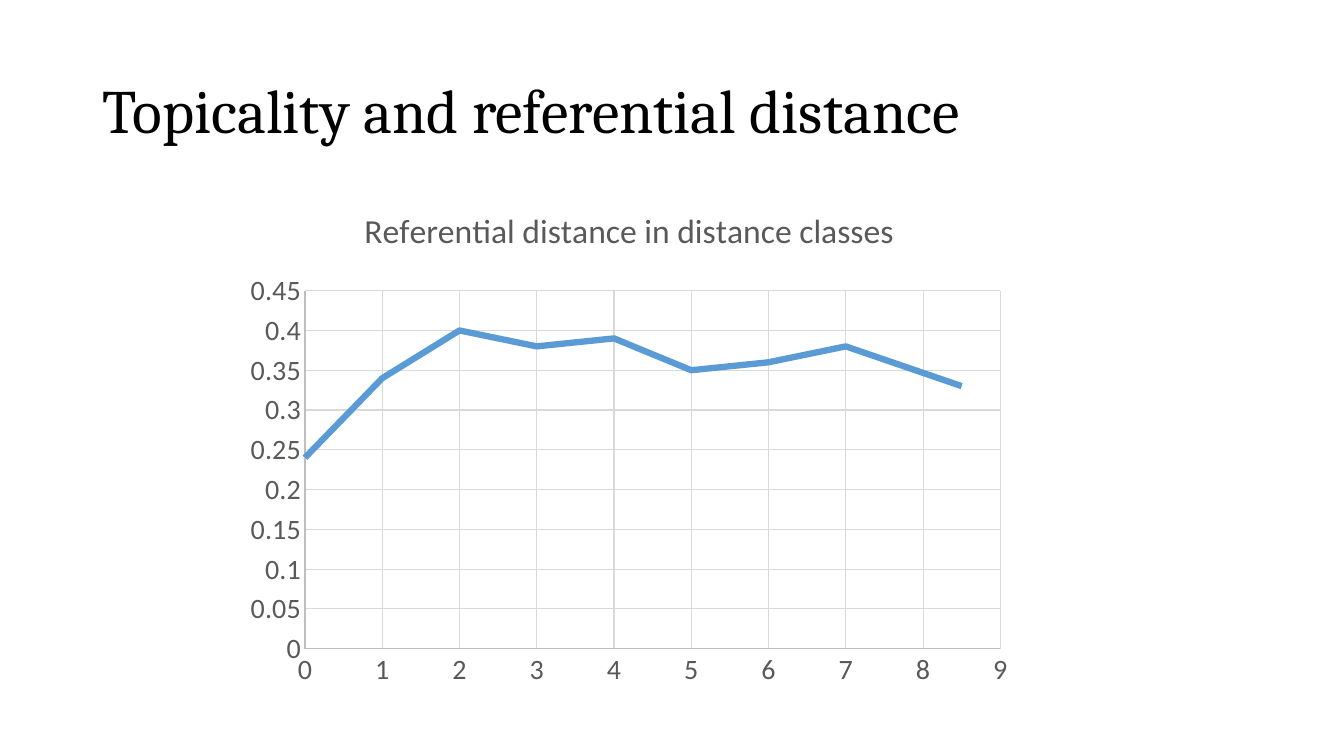
import pptx
import pptx.chart.data
import pptx.dml.color
import pptx.enum.chart
import pptx.enum.text
import pptx.util

# Content
TITLE = "Topicality and referential distance"
CHART_TITLE = "Referential distance in distance classes"
POINTS = [
    (0, 0.24), (1, 0.34), (2, 0.4), (3, 0.38), (4, 0.39),
    (5, 0.35), (6, 0.36), (7, 0.38), (8.5, 0.33),
]
COLOURS = {"title": "000000", "label": "595959", "axis": "BFBFBF",
           "grid": "D9D9D9", "series": "5B9BD5"}
TITLE_AREA = (0.92, 0.4, 11.5, 1.45)
CHART_AREA = (2.33, 1.85, 7.82, 5.07)


def inches(area):
    return [pptx.util.Inches(length) for length in area]


def style_font(font, name, size, colour):
    font.name = name
    font.size = pptx.util.Pt(size)
    font.bold = False
    font.color.rgb = pptx.dml.color.RGBColor.from_string(COLOURS[colour])


def style_line(line, colour, width):
    line.color.rgb = pptx.dml.color.RGBColor.from_string(COLOURS[colour])
    line.width = pptx.util.Pt(width)


def style_axis(axis, maximum, step, number_format, line_width):
    axis.minimum_scale = 0
    axis.maximum_scale = maximum
    axis.major_unit = step
    axis.major_tick_mark = pptx.enum.chart.XL_TICK_MARK.NONE
    axis.minor_tick_mark = pptx.enum.chart.XL_TICK_MARK.NONE
    axis.tick_labels.number_format = number_format
    axis.tick_labels.number_format_is_linked = False
    style_font(axis.tick_labels.font, "Calibri", 20, "label")
    style_line(axis.format.line, "axis", line_width)
    axis.has_major_gridlines = True
    style_line(axis.major_gridlines.format.line, "grid", 0.75)


deck = pptx.Presentation()
deck.slide_width = pptx.util.Inches(13.33)
deck.slide_height = pptx.util.Inches(7.5)
page = deck.slides.add_slide(deck.slide_layouts[6])

# Slide title
frame = page.shapes.add_textbox(*inches(TITLE_AREA)).text_frame
frame.word_wrap = True
frame.vertical_anchor = pptx.enum.text.MSO_ANCHOR.MIDDLE
para = frame.paragraphs[0]
para.text = TITLE
para.line_spacing = 0.9
style_font(para.font, "Cambria", 44, "title")

# Line chart over distance classes
data = pptx.chart.data.XyChartData()
distances = data.add_series("Series 1")
for x, y in POINTS:
    distances.add_data_point(x, y)
chart = page.shapes.add_chart(
    pptx.enum.chart.XL_CHART_TYPE.XY_SCATTER_LINES_NO_MARKERS,
    *inches(CHART_AREA), data).chart
chart.has_legend = False
chart.font.name = "Calibri"
chart.font.size = pptx.util.Pt(10)
chart.has_title = True
heading = chart.chart_title.text_frame.paragraphs[0]
heading.text = CHART_TITLE
style_font(heading.font, "Calibri", 24, "label")
chart.chart_title.include_in_layout = False

style_axis(chart.category_axis, 9, 1, "General", 0.75)
style_axis(chart.value_axis, 0.45, 0.05, "General", 2)

plot = chart.plots[0]
plot.vary_by_categories = False
curve = plot.series[0]
curve.smooth = False
curve.marker.style = pptx.enum.chart.XL_MARKER_STYLE.NONE
style_line(curve.format.line, "series", 4.5)

deck.save("out.pptx")
